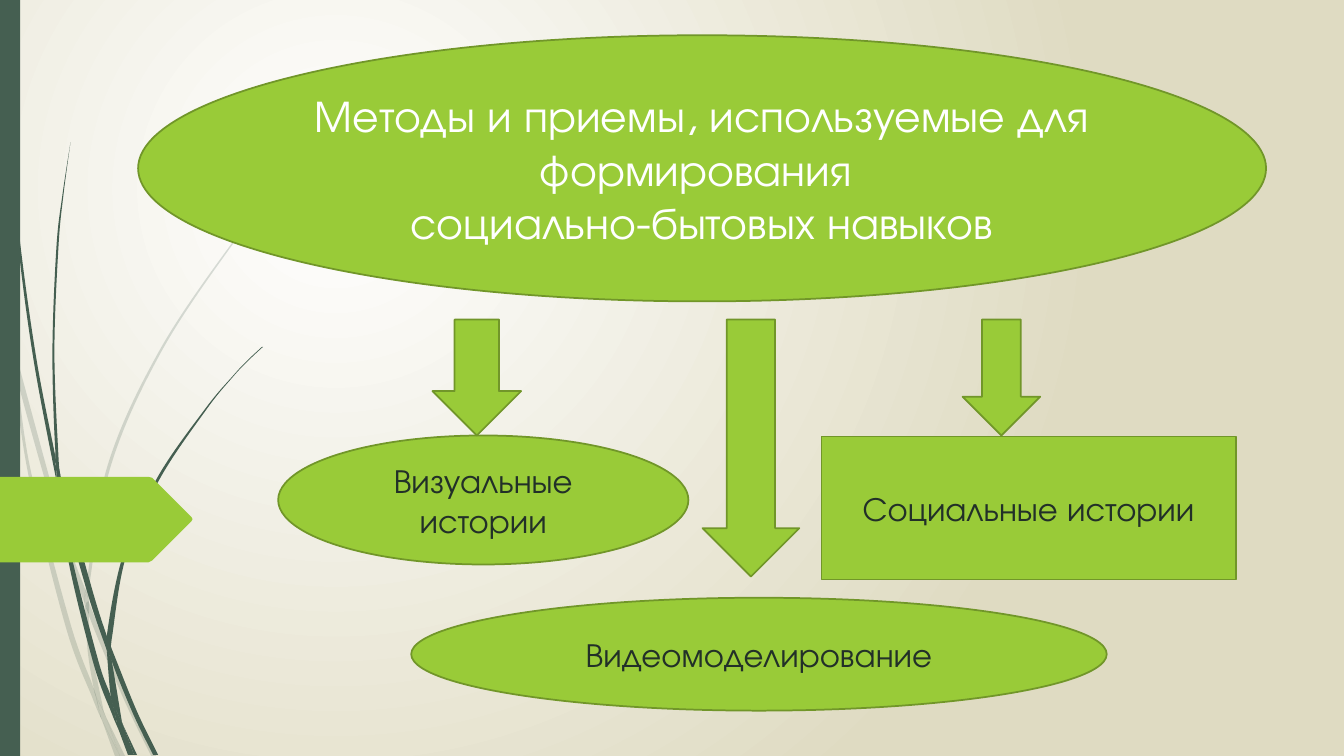
from lxml import etree
from pptx import Presentation
from pptx import util as u
from pptx.dml.color import RGBColor
from pptx.enum import shapes, text
from pptx.oxml.ns import qn

COLUMNS, ROWS = 40 / 3, 7.5
FONT = "TeX Gyre Adventor"
GREEN, OUTLINE, PINE, INK, WHITE, SAND = (
    "99CB38", "719629", "455F51", "223028", "FFFFFF", "DFDBC2")
OVAL = shapes.MSO_SHAPE.OVAL
RECTANGLE = shapes.MSO_SHAPE.RECTANGLE
ARROW = shapes.MSO_SHAPE.DOWN_ARROW

PALE_BLADES = [
    ([(0, 2.99), (0.1, 3.44), (0.11, 3.5)], [(0.11, 3.5), (0.09, 3.22), (0, 2.82)]),
    ([(0.14, 3.45), (0.17, 3.76), (0.58, 5.22), (0.84, 5.99)],
     [(0.85, 5.86), (0.62, 5.2), (0.14, 3.45)]),
    ([(0.88, 5.96), (0.88, 6.1), (1.23, 6.94), (1.5, 7.5)],
     [(1.55, 7.5), (1.27, 6.92), (0.92, 6.07), (0.88, 5.96)]),
    ([(1.05, 7.11), (1.19, 7.5)], [(1.24, 7.5), (1.05, 7.11)]),
    ([(0.11, 3.5), (0.28, 4.7), (0.65, 6.21), (0.92, 6.93), (1.01, 7.14)],
     [(0.99, 7.07), (0.93, 6.83), (0.7, 6.19), (0.31, 4.69), (0.17, 3.76), (0.11, 3.5)]),
    ([(0.84, 5.99), (0.87, 6.46), (0.93, 6.83), (0.96, 6.92), (1.05, 7.11)],
     [(1.03, 7.06), (0.91, 6.46), (0.88, 6.1), (0.88, 6.08), (0.84, 5.99)]),
    ([(3.12, 1.53), (2.89, 1.75), (2.68, 1.97), (2.28, 2.44), (1.58, 3.48), (1.07, 4.61),
      (0.85, 5.84), (0.85, 5.86), (0.88, 5.96)],
     [(0.88, 5.84), (1.1, 4.62), (1.6, 3.49), (2.29, 2.45), (2.68, 1.98), (2.9, 1.75),
      (3.12, 1.54)]),
    ([(1.01, 7.14), (1.14, 7.5)], [(1.19, 7.5), (1.01, 7.14)]),
    ([(0.85, 5.86), (0.84, 5.99), (0.88, 6.08)], [(0.88, 6.1), (0.88, 5.96), (0.85, 5.86)]),
    ([(0.93, 6.83), (0.99, 7.07), (1.01, 7.14), (1.19, 7.5)],
     [(1.19, 7.5), (1.05, 7.11), (0.96, 6.92), (0.93, 6.83)]),
]
DARK_BLADES = [
    ([(0.03, 0), (0.04, 0.48), (0.07, 1.1), (0.17, 2.33), (0.33, 3.55), (0.56, 4.77),
      (0.57, 4.81)],
     [(0.55, 4.57), (0.55, 4.53), (0.36, 3.55), (0.19, 2.32), (0.08, 1.09), (0.05, 0.48),
      (0.04, 0)]),
    ([(0.6, 4.72), (0.64, 5.05), (0.88, 5.92), (1.06, 6.45)],
     [(1.06, 6.33), (1.06, 6.31), (0.93, 5.9), (0.6, 4.72)]),
    ([(1.1, 6.41), (1.11, 6.56), (1.32, 7.08), (1.52, 7.49)],
     [(1.57, 7.49), (1.36, 7.06), (1.13, 6.49), (1.1, 6.41)]),
    ([(0.57, 4.77), (0.68, 5.57), (0.93, 6.59), (1.11, 7.08), (1.17, 7.22)],
     [(1.16, 7.17), (1.1, 6.91), (0.98, 6.57), (0.72, 5.56), (0.64, 5.05), (0.57, 4.77)]),
    ([(0.7, 1.41), (0.62, 1.93), (0.56, 2.45), (0.52, 3.49), (0.55, 4.49), (0.6, 4.72)],
     [(0.6, 4.72), (0.58, 4.53), (0.54, 3.49), (0.58, 2.45), (0.63, 1.93), (0.7, 1.41)]),
    ([(1.22, 7.19), (1.33, 7.49)], [(1.36, 7.49), (1.22, 7.19)]),
    ([(0.55, 4.49), (0.55, 4.53), (0.57, 4.77), (0.64, 5.05)],
     [(0.64, 5.05), (0.6, 4.72), (0.55, 4.49)]),
    ([(2.6, 3.44), (2.45, 3.58), (2.31, 3.73), (2.04, 4.05), (1.56, 4.74), (1.22, 5.51),
      (1.06, 6.31), (1.1, 6.41)],
     [(1.11, 6.33), (1.25, 5.52), (1.58, 4.76), (2.05, 4.06), (2.31, 3.74), (2.45, 3.59),
      (2.61, 3.44)]),
    ([(1.17, 7.22), (1.27, 7.49)], [(1.31, 7.49), (1.17, 7.22)]),
    ([(1.06, 6.45), (1.1, 6.91), (1.16, 7.06), (1.22, 7.19)],
     [(1.21, 7.16), (1.11, 6.56), (1.09, 6.51), (1.06, 6.45)]),
    ([(1.06, 6.31), (1.06, 6.45), (1.09, 6.51)], [(1.11, 6.56), (1.1, 6.41), (1.06, 6.31)]),
    ([(1.1, 6.91), (1.16, 7.17), (1.17, 7.22), (1.3, 7.49)],
     [(1.33, 7.49), (1.22, 7.19), (1.16, 7.06), (1.1, 6.91)]),
]
TAG = [(0, 4.73), (1.47, 4.73), (1.51, 4.74), (1.9, 5.13), (1.91, 5.15),
       (1.9, 5.17), (1.51, 5.56), (1.47, 5.58), (0, 5.58)]
METHODS = [
    (OVAL, (1.39, 1.33, 4.07, 1.28), "Визуальные истории"),
    (RECTANGLE, (6.78, 1.34, 4.11, 1.42), "Социальные истории"),
    (OVAL, (2.71, 2.94, 6.9, 1.12), "Видеомоделирование"),
]
ARROWS = [(2.92, 0.88, 1.15), (8.18, 0.77, 1.15), (5.6, 0.96, 2.55)]


def color(value):
    return RGBColor.from_string(value)


def cells(*values):
    return [u.Inches(value) for value in values]


def apply(target, values):
    for name, value in values.items():
        setattr(target, name, value)


def paint(shape, fill, line=None, opacity=None):
    shape.shadow.inherit = False
    shape.fill.solid()
    shape.fill.fore_color.rgb = color(fill)
    if opacity:
        tint = shape._element.spPr.find(qn("a:solidFill"))[0]
        etree.SubElement(tint, qn("a:alpha"), val=str(opacity * 1000))
    if line:
        shape.line.color.rgb = color(line)
        shape.line.width = u.Pt(1.25)
    else:
        shape.line.fill.background()


def add_block(slide, kind, box, paragraphs=(), size=24, ink=INK):
    shape = slide.shapes.add_shape(kind, *cells(*box))
    paint(shape, GREEN, OUTLINE)
    frame = shape.text_frame
    apply(frame, {"word_wrap": True, "vertical_anchor": text.MSO_ANCHOR.MIDDLE})
    for index, words in enumerate(paragraphs):
        paragraph = frame.add_paragraph() if index else frame.paragraphs[0]
        paragraph.alignment = text.PP_ALIGN.CENTER
        run = paragraph.add_run()
        run.text = words
        apply(run.font, {"name": FONT, "size": u.Pt(size)})
        run.font.color.rgb = color(ink)


def curve(knots):
    padded = [knots[0], *knots, knots[-1]]
    points = []
    for a, b, c, d in zip(padded, padded[1:], padded[2:], padded[3:]):
        points += [tuple(q + (r - p) / 6 for p, q, r in zip(a, b, c)),
                   tuple(r - (s - q) / 6 for q, r, s in zip(b, c, d)), c]
    return points


def add_outline(slide, box, points, fill, opacity=None):
    left, top = box[:2]
    start, *rest = [cells(left + x, top + y) for x, y in points]
    builder = slide.shapes.build_freeform(*start)
    builder.add_line_segments(rest, close=True)
    shape = builder.convert_to_shape()
    paint(shape, fill, opacity=opacity)
    return shape


def add_blade(slide, box, near, far, opacity):
    points = [near[0], *curve(near), near[-1], far[0], far[0], *curve(far)]
    shape = add_outline(slide, box, points, PINE, opacity)
    lines = list(shape._element.iter(qn("a:lnTo")))
    for first in range(0, len(points) - 1, 3):
        bend = etree.Element(qn("a:cubicBezTo"))
        lines[first].addprevious(bend)
        for line in lines[first:first + 3]:
            bend.append(line[0])
            line.getparent().remove(line)


def add_background(slide):
    fill = slide.background.fill
    fill.gradient()
    for stop, value in zip(fill.gradient_stops, (WHITE, SAND)):
        stop.color.rgb = color(value)
    gradient = slide._element.find(".//" + qn("a:gradFill"))
    gradient.remove(gradient.find(qn("a:lin")))
    circle = etree.SubElement(gradient, qn("a:path"), path="circle")
    etree.SubElement(circle, qn("a:fillToRect"),
                     l="50000", t="50000", r="100000", b="100000")


def add_side_decoration(slide, box):
    left, top, width, height = box
    for blades, opacity in ((PALE_BLADES, 20), (DARK_BLADES, None)):
        for near, far in blades:
            add_blade(slide, box, near, far, opacity)
    band = slide.shapes.add_shape(RECTANGLE, *cells(left, top, 0.2, height))
    paint(band, PINE)
    add_outline(slide, box, TAG, GREEN)


def add_heading(slide, box):
    add_block(slide, OVAL, box, ["Методы и приемы, используемые для формирования ",
                                 "социально-бытовых навыков"], 32, WHITE)


def add_methods(slide, box):
    left, top = box[:2]
    for kind, (x, y, width, height), words in METHODS:
        add_block(slide, kind, (left + x, top + y, width, height), [words])
    for x, width, height in ARROWS:
        add_block(slide, ARROW, (left + x, top + 0.18, width, height))


def main():
    presentation = Presentation()
    apply(presentation, dict(zip(("slide_width", "slide_height"), cells(COLUMNS, ROWS))))
    slide = presentation.slides.add_slide(presentation.slide_layouts[6])
    add_background(slide)
    add_side_decoration(slide, (0, 0, 3.12, ROWS))
    add_heading(slide, (1.37, 0.35, 11.19, 2.64))
    add_methods(slide, (1.37, 2.99, 11.19, 4.06))
    presentation.save("out.pptx")


if __name__ == "__main__":
    main()
